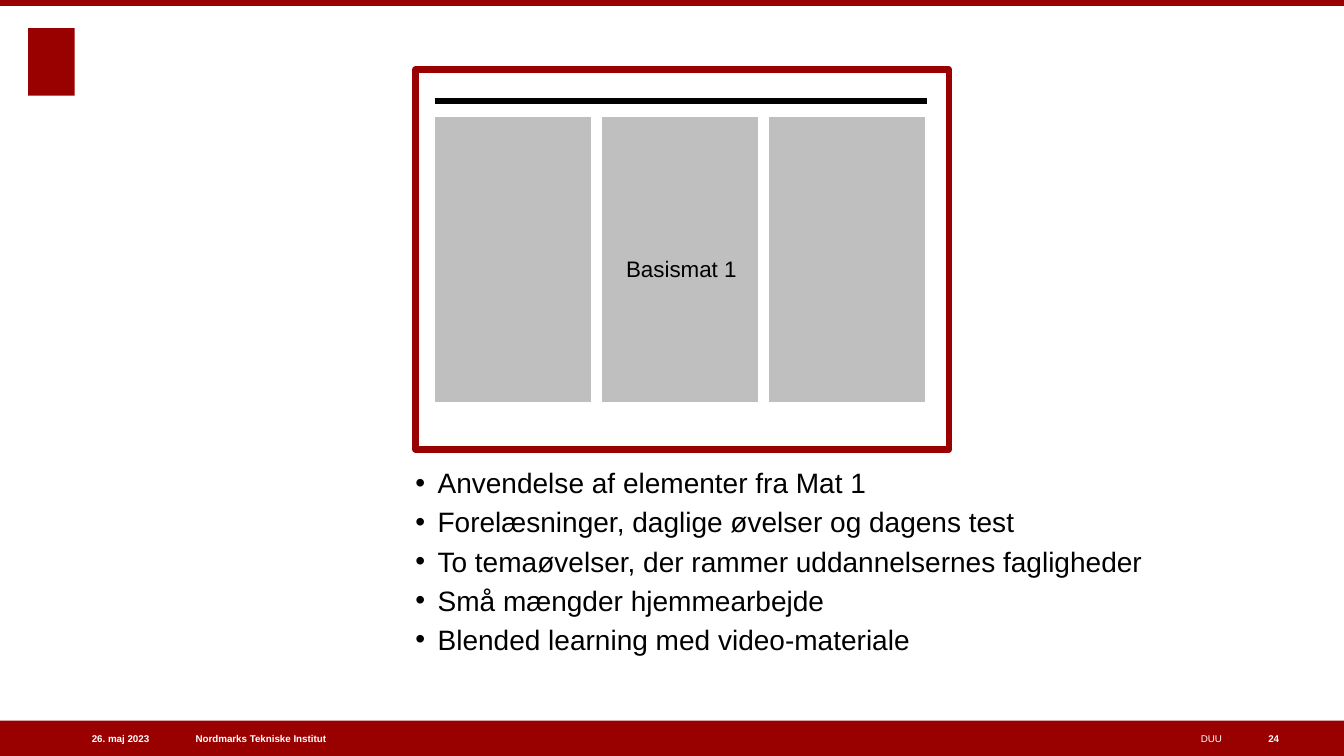
"""Build a course slide with a framed three-column plan, bullets and a footer."""
from dataclasses import dataclass
from typing import Any, Optional

from lxml import etree
from pptx import Presentation
from pptx import util as u
from pptx.dml import color
from pptx.enum import shapes, text
from pptx.oxml import ns


@dataclass(frozen=True)
class Theme:
    red: str = "990000"
    gray: str = "BFBFBF"
    black: str = "000000"
    white: str = "FFFFFF"
    font: str = "Arial"
    small: float = 7
    label: float = 16
    body: float = 20
    thin: float = 0.75
    thick: float = 4.5


@dataclass(frozen=True)
class Box:
    left: float
    top: float
    width: float
    height: float

    def place(self) -> tuple:
        return tuple(map(u.Inches, (self.left, self.top, self.width, self.height)))


@dataclass(frozen=True)
class Panel:
    box: Box
    fill: Optional[str] = None
    line: Optional[str] = None
    weight: float = 0


@dataclass(frozen=True)
class Label:
    box: Box
    words: str
    size: float
    tint: str
    bold: bool = False
    align: Any = text.PP_ALIGN.LEFT
    wrap: bool = True


THEME = Theme()
WIDE, HIGH = 13.33, 7.5
FOOT, BAND = 7.15, 0.35
COL, STEP, START = 1.56, 1.655, 4.31
RIGHT = text.PP_ALIGN.RIGHT

PANELS = [
    Panel(Box(0.28, 0.28, 0.46, 0.67), THEME.red),
    Panel(Box(0, FOOT, WIDE, BAND), THEME.red),
    Panel(Box(0, 0, WIDE, 0.06), THEME.red),
    *(Panel(Box(START + i * STEP, 1.16, COL, 2.83), THEME.gray, THEME.white, THEME.thin)
      for i in range(3)),
    Panel(Box(4.12, 0.69, 5.29, 3.77), None, THEME.red, THEME.thick),
]

LABELS = [
    Label(Box(1.94, FOOT, 3.72, BAND), "Nordmarks Tekniske Institut",
          THEME.small, THEME.white, True),
    Label(Box(0.27, FOOT, 1.21, BAND), "26. maj 2023",
          THEME.small, THEME.white, True, RIGHT),
    Label(Box(6.11, FOOT, 6.01, BAND), "DUU",
          THEME.small, THEME.white, False, RIGHT),
    Label(Box(12.58, FOOT, 0.47, BAND), "24", THEME.small, THEME.white, True),
    Label(Box(6.21, 2.53, 1.11, 0.27), "Basismat 1",
          THEME.label, THEME.black, wrap=False),
]

POINTS = [
    "Anvendelse af elementer fra Mat 1",
    "Forelæsninger, daglige øvelser og dagens test",
    "To temaøvelser, der rammer uddannelsernes fagligheder",
    "Små mængder hjemmearbejde",
    "Blended learning med video-materiale",
]


def rgb(code: str) -> color.RGBColor:
    return color.RGBColor.from_string(code)


def add_run(para: Any, words: str, size: float, tint: str, bold: bool = False) -> None:
    run = para.add_run()
    run.text = words
    run.font.name = THEME.font
    run.font.size = u.Pt(size)
    run.font.bold = bold
    run.font.color.rgb = rgb(tint)


def set_frame(frame: Any, anchor: Any, wrap: bool = True) -> None:
    frame.margin_left = frame.margin_top = 0
    frame.margin_right = frame.margin_bottom = 0
    frame.auto_size = text.MSO_AUTO_SIZE.NONE
    frame.vertical_anchor = anchor
    frame.word_wrap = wrap


def draw_panel(slide: Any, panel: Panel) -> None:
    shape = slide.shapes.add_shape(shapes.MSO_SHAPE.RECTANGLE, *panel.box.place())
    shape.shadow.inherit = False
    if panel.fill:
        shape.fill.solid()
        shape.fill.fore_color.rgb = rgb(panel.fill)
    else:
        shape.fill.background()
    if panel.line:
        shape.line.color.rgb = rgb(panel.line)
        shape.line.width = u.Pt(panel.weight)
    else:
        shape.line.fill.background()


def draw_label(slide: Any, label: Label) -> None:
    frame = slide.shapes.add_textbox(*label.box.place()).text_frame
    set_frame(frame, text.MSO_ANCHOR.MIDDLE, label.wrap)
    para = frame.paragraphs[0]
    para.alignment = label.align
    add_run(para, label.words, label.size, label.tint, label.bold)


def draw_rule(slide: Any) -> None:
    ends = map(u.Inches, (START, 1, 9.19, 1))
    rule = slide.shapes.add_connector(shapes.MSO_CONNECTOR.STRAIGHT, *ends)
    rule.line.color.rgb = rgb(THEME.black)
    rule.line.width = u.Pt(THEME.thick)
    etree.SubElement(rule.element.spPr, ns.qn("a:effectLst"))


def fill_body(body: Any, box: Box) -> None:
    body.left, body.top, body.width, body.height = box.place()
    frame = body.text_frame
    set_frame(frame, text.MSO_ANCHOR.TOP)
    for i, point in enumerate(POINTS):
        para = frame.add_paragraph() if i else frame.paragraphs[0]
        props = para._p.get_or_add_pPr()
        props.set("marL", str(u.Inches(0.22)))
        props.set("indent", str(u.Inches(-0.22)))
        mark = etree.SubElement(props, ns.qn("a:buChar"))
        mark.set("char", "•")
        add_run(para, point, THEME.body, THEME.black)


def main() -> None:
    deck = Presentation()
    deck.slide_width, deck.slide_height = u.Inches(WIDE), u.Inches(HIGH)
    slide = deck.slides.add_slide(deck.slide_layouts[1])
    title = slide.shapes.title.element
    title.getparent().remove(title)
    fill_body(slide.placeholders[1], Box(4.12, 4.62, 8.01, 2.22))
    for panel in PANELS:
        draw_panel(slide, panel)
    draw_rule(slide)
    for label in LABELS:
        draw_label(slide, label)
    deck.save("out.pptx")


if __name__ == "__main__":
    main()
